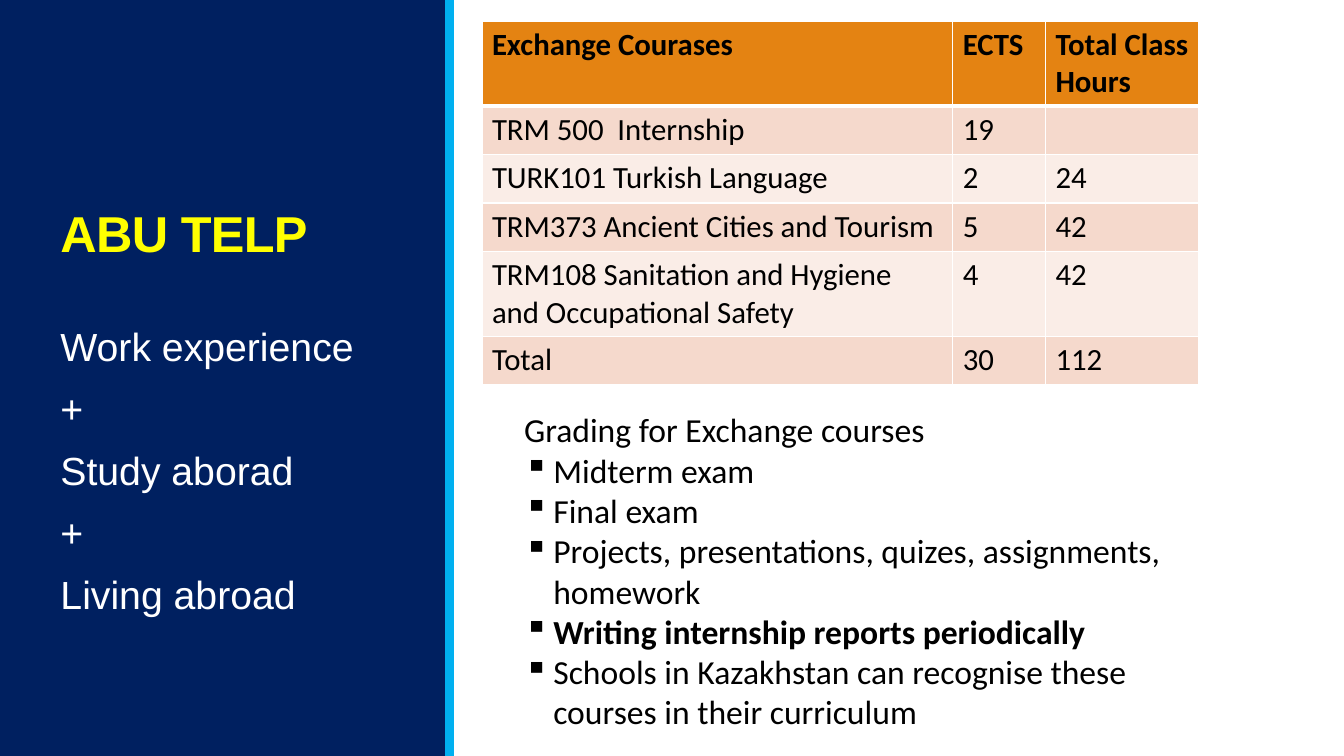
from dataclasses import dataclass

from lxml import etree
from pptx import Presentation
from pptx import util as u
from pptx.dml.color import RGBColor
from pptx.enum import shapes, text
from pptx.oxml import ns


@dataclass(frozen=True)
class Theme:
    navy: str = "002060"
    sky: str = "00B0F0"
    yellow: str = "FFFF00"
    white: str = "FFFFFF"
    black: str = "000000"
    header: str = "E48312"
    bands: tuple = ("F5D9CC", "FAEDE7")
    side_font: str = "Arial"
    main_font: str = "Calibri"
    title_size: int = 36
    side_size: int = 28
    list_size: int = 24
    table_size: int = 22


THEME = Theme()
WIDTH, HEIGHT = 13.33, 7.5
SIDE_LEFT, SIDE_WIDTH = 0.5, 3.5
COLUMNS = (4.67, 0.92, 1.52)
LINE_ROW, DOUBLE_ROW = 0.48, 0.83

COURSES = [
    ("Exchange Courases", "ECTS", "Total Class Hours"),
    ("TRM 500  Internship", "19", ""),
    ("TURK101 Turkish Language", "2", "24"),
    ("TRM373 Ancient Cities and Tourism", "5", "42"),
    ("TRM108 Sanitation and Hygiene and Occupational Safety", "4", "42"),
    ("Total", "30", "112"),
]
DOUBLE_ROWS = (0, 4)
EXPERIENCE = ["Work experience", "+", "Study aborad", "+", "Living abroad"]
GRADING = [
    "Grading for Exchange courses",
    "Midterm exam",
    "Final exam",
    "Projects, presentations, quizes, assignments, homework",
    "Writing internship reports periodically",
    "Schools in Kazakhstan can recognise these courses in their curriculum",
]
KEY_POINT = 4


def place(box, left, top, width, height):
    box.left, box.top = u.Inches(left), u.Inches(top)
    box.width, box.height = u.Inches(width), u.Inches(height)


def style(para, font, size, colour, bold=False):
    para.font.name, para.font.size, para.font.bold = font, u.Pt(size), bold
    para.font.color.rgb = RGBColor.from_string(colour)


def set_bullet(para, mark=None, indent=0):
    props = para._p.get_or_add_pPr()
    props.set("marL", str(u.Inches(indent)))
    props.set("indent", str(-u.Inches(indent)))
    if mark:
        etree.SubElement(props, ns.qn("a:buChar")).set("char", mark)
    else:
        etree.SubElement(props, ns.qn("a:buNone"))


def fill_lines(frame, lines):
    """Write one paragraph per line and return the paragraphs."""
    frame.word_wrap = True
    for _ in lines[1:]:
        frame.add_paragraph()
    for para, line in zip(frame.paragraphs, lines):
        para.text = line
    return frame.paragraphs


def add_panel(page, left, width, colour):
    panel = page.shapes.add_shape(shapes.MSO_SHAPE.RECTANGLE, u.Inches(left), 0,
                                  u.Inches(width), u.Inches(HEIGHT))
    panel.shadow.inherit = False
    panel.fill.solid()
    panel.fill.fore_color.rgb = panel.line.color.rgb = RGBColor.from_string(colour)
    panel.line.width = u.Pt(1.25)
    # Behind the placeholders
    panel._element.getparent().insert(2, panel._element)


def add_title(page):
    title = page.shapes.title
    place(title, SIDE_LEFT, 0.65, SIDE_WIDTH, 2.5)
    frame = title.text_frame
    frame.vertical_anchor = text.MSO_ANCHOR.BOTTOM
    frame.margin_bottom = u.Inches(0.54)
    para = fill_lines(frame, ["ABU TELP"])[0]
    para.alignment, para.line_spacing = text.PP_ALIGN.LEFT, 0.85
    style(para, THEME.side_font, THEME.title_size, THEME.yellow, True)
    para._p.pPr.find(ns.qn("a:defRPr")).set("spc", "-50")


def add_experience(page):
    body = page.placeholders[1]
    place(body, SIDE_LEFT, 3.2, SIDE_WIDTH, 3.7)
    for index, para in enumerate(fill_lines(body.text_frame, EXPERIENCE)):
        para.line_spacing = 0.9
        para.space_before = u.Pt(12 if index else 0)
        para.space_after = u.Pt(2)
        set_bullet(para)
        style(para, THEME.side_font, THEME.side_size, THEME.white)


def set_borders(cell, widths):
    props = cell._tc.get_or_add_tcPr()
    for side, points in widths.items():
        line = etree.SubElement(props, ns.qn("a:ln" + side), w=str(u.Pt(points)))
        fill = etree.SubElement(line, ns.qn("a:solidFill"))
        etree.SubElement(fill, ns.qn("a:srgbClr"), val=THEME.white)


def add_courses(page):
    heights = [DOUBLE_ROW if row in DOUBLE_ROWS else LINE_ROW
               for row in range(len(COURSES))]
    frame = page.shapes.add_table(len(COURSES), len(COLUMNS), u.Inches(4.78),
                                  u.Inches(0.21), u.Inches(sum(COLUMNS)),
                                  u.Inches(sum(heights)))
    table = frame.table
    for column, width in zip(table.columns, COLUMNS):
        column.width = u.Inches(width)
    for index, (row, height) in enumerate(zip(table.rows, heights)):
        row.height = u.Inches(height)
        is_header = index == 0
        colour = THEME.header if is_header else THEME.bands[(index - 1) % 2]
        for cell, value in zip(row.cells, COURSES[index]):
            set_borders(cell, {"L": 1, "R": 1, "T": 3 if index == 1 else 1,
                               "B": 3 if is_header else 1})
            cell.fill.solid()
            cell.fill.fore_color.rgb = RGBColor.from_string(colour)
            para = cell.text_frame.paragraphs[0]
            if value:
                para.text = value
            style(para, THEME.main_font, THEME.table_size, THEME.black, is_header)


def add_grading(page):
    box = page.shapes.add_textbox(*map(u.Inches, (5.1, 4.01, 7.03, 3.7)))
    frame = box.text_frame
    for index, para in enumerate(fill_lines(frame, GRADING)):
        if index:
            set_bullet(para, "▪", 0.29)
        style(para, THEME.main_font, THEME.list_size, THEME.black, index == KEY_POINT)
    frame.auto_size = text.MSO_AUTO_SIZE.SHAPE_TO_FIT_TEXT


def main():
    deck = Presentation()
    deck.slide_width, deck.slide_height = u.Inches(WIDTH), u.Inches(HEIGHT)
    page = deck.slides.add_slide(deck.slide_layouts[1])

    # Side panel: the accent bar lies above the navy field
    add_panel(page, 4.42, 0.07, THEME.sky)
    add_panel(page, 0, 4.43, THEME.navy)
    add_title(page)
    add_experience(page)

    # Courses and grading
    add_courses(page)
    add_grading(page)
    deck.save("out.pptx")


if __name__ == "__main__":
    main()
